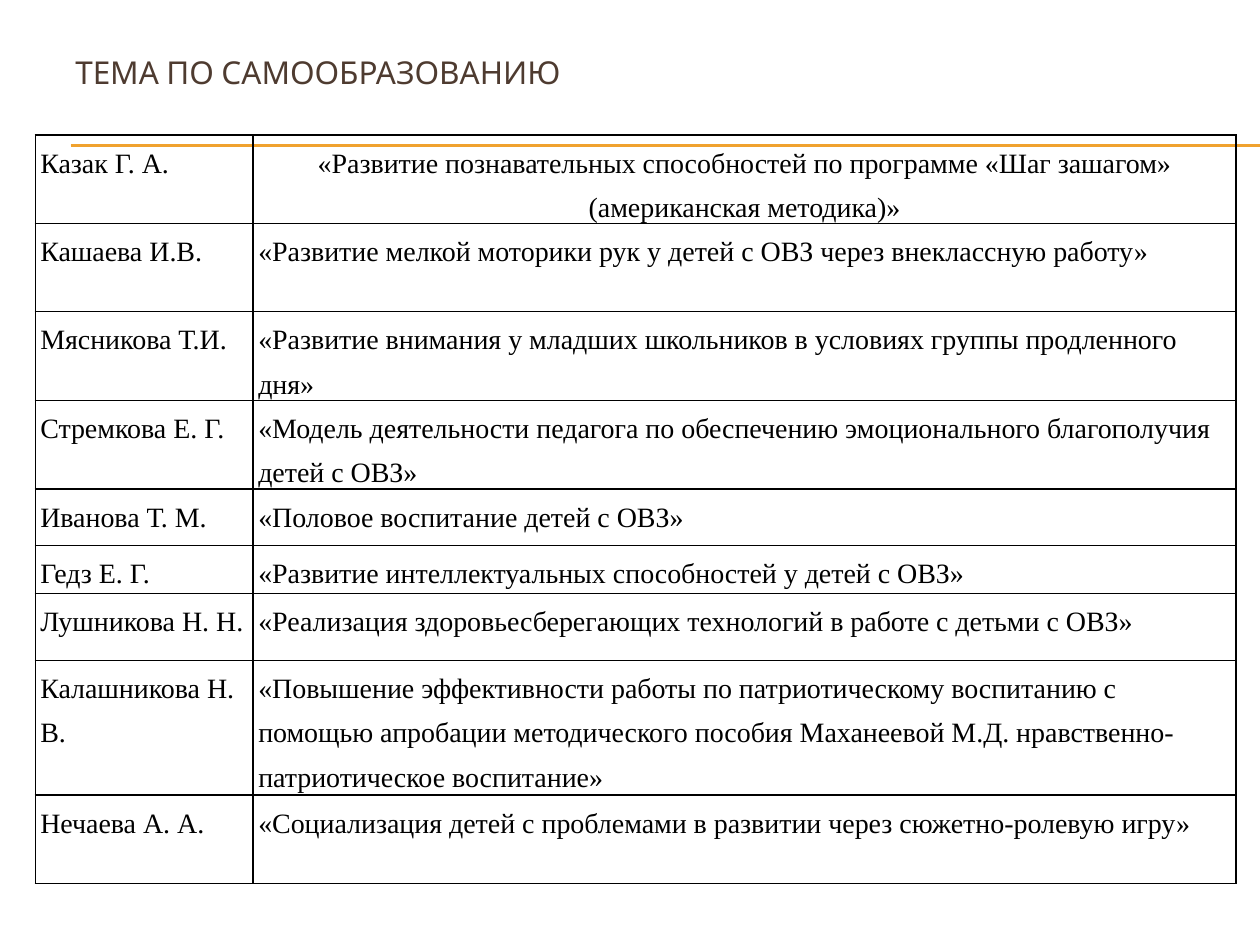
import pptx
import pptx.util
import pptx.dml.color
import pptx.enum.shapes
import pptx.enum.text
from lxml import etree

Inches, Pt = pptx.util.Inches, pptx.util.Pt
ALIGN = pptx.enum.text.PP_ALIGN
NS = "http://schemas.openxmlformats.org/drawingml/2006/main"

TITLE = "ТЕМА ПО САМООБРАЗОВАНИЮ"
# teacher, topic, row height
TOPICS = [
    ("Казак Г. А.", "«Развитие познавательных способностей по программе «Шаг зашагом» (американская методика)»", 0.7),
    ("Кашаева И.В.", "«Развитие мелкой моторики рук у детей с ОВЗ через внеклассную работу»", 0.7),
    ("Мясникова Т.И.", "«Развитие внимания у младших школьников в условиях группы продленного дня»", 0.7),
    ("Стремкова Е. Г.", "«Модель деятельности педагога по обеспечению эмоционального благополучия детей с ОВЗ»", 0.7),
    ("Иванова Т. М.", "«Половое воспитание детей с ОВЗ»", 0.45),
    ("Гедз Е. Г.", "«Развитие интеллектуальных способностей у детей с ОВЗ»", 0.38),
    ("Лушникова Н. Н.", "«Реализация здоровьесберегающих технологий в работе с детьми с ОВЗ»", 0.53),
    ("Калашникова Н. В.", "«Повышение эффективности работы по патриотическому воспитанию с помощью апробации "
     "методического пособия Маханеевой М.Д. нравственно-патриотическое воспитание»", 1.07),
    ("Нечаева А. А.", "«Социализация детей с проблемами в развитии через сюжетно-ролевую игру»", 0.7),
]
COLS = (1.73, 7.8)
RULES = (1.15, 1.16)


def color(code):
    return pptx.dml.color.RGBColor.from_string(code)


def style(par, face, size, code):
    for run in par.runs:
        run.font.name = face
        run.font.size = Pt(size)
        run.font.color.rgb = color(code)


def border(cell, code, width):
    """Draw all four edges of a cell; edges come before the fill in the XML."""
    props = cell._tc.get_or_add_tcPr()
    for spot, side in enumerate(("lnL", "lnR", "lnT", "lnB")):
        edge = etree.Element(f"{{{NS}}}{side}", w=str(Pt(width)))
        fill = etree.SubElement(edge, f"{{{NS}}}solidFill")
        etree.SubElement(fill, f"{{{NS}}}srgbClr", val=code)
        props.insert(spot, edge)


def add_rule(slide, top):
    rule = slide.shapes.add_connector(
        pptx.enum.shapes.MSO_CONNECTOR.STRAIGHT,
        Inches(0.56), Inches(top), Inches(10), Inches(top))
    rule.line.color.rgb = color("F0A22E")
    rule.line.width = Pt(0.75)
    etree.SubElement(rule._element.spPr, f"{{{NS}}}effectLst")


def add_title(slide):
    box = slide.shapes.add_textbox(Inches(0.5), Inches(0.3), Inches(9), Inches(0.54))
    frame = box.text_frame
    frame.word_wrap = True
    frame.vertical_anchor = pptx.enum.text.MSO_ANCHOR.MIDDLE
    frame.text = TITLE
    style(frame.paragraphs[0], "Karla", 18, "4E3B30")


def fill_cell(cell, text):
    cell.fill.background()
    border(cell, "000000", 1)
    cell.margin_left = cell.margin_right = Inches(0.04)
    cell.margin_top = cell.margin_bottom = 0
    cell.text_frame.text = text
    par = cell.text_frame.paragraphs[0]
    par.alignment = ALIGN.LEFT
    par.line_spacing = Pt(25.3)
    par.space_before = Pt(1.4)
    style(par, "Times New Roman", 16, "000000")


def add_topics(slide):
    high = sum(row[-1] for row in TOPICS)
    table = slide.shapes.add_table(
        len(TOPICS), len(COLS), Inches(0.28), Inches(1.07),
        Inches(sum(COLS)), Inches(high)).table
    table.first_row = table.horz_banding = False
    for col, width in zip(table.columns, COLS):
        col.width = Inches(width)
    for row, (*texts, height) in zip(table.rows, TOPICS):
        row.height = Inches(height)
        for cell, text in zip(row.cells, texts):
            fill_cell(cell, text)
    table.cell(0, 1).text_frame.paragraphs[0].alignment = ALIGN.CENTER


def main():
    deck = pptx.Presentation()
    deck.slide_width, deck.slide_height = Inches(10), Inches(7.5)
    slide = deck.slides.add_slide(deck.slide_layouts[6])
    for top in RULES:
        add_rule(slide, top)
    add_title(slide)
    add_topics(slide)
    deck.save("out.pptx")


if __name__ == "__main__":
    main()
